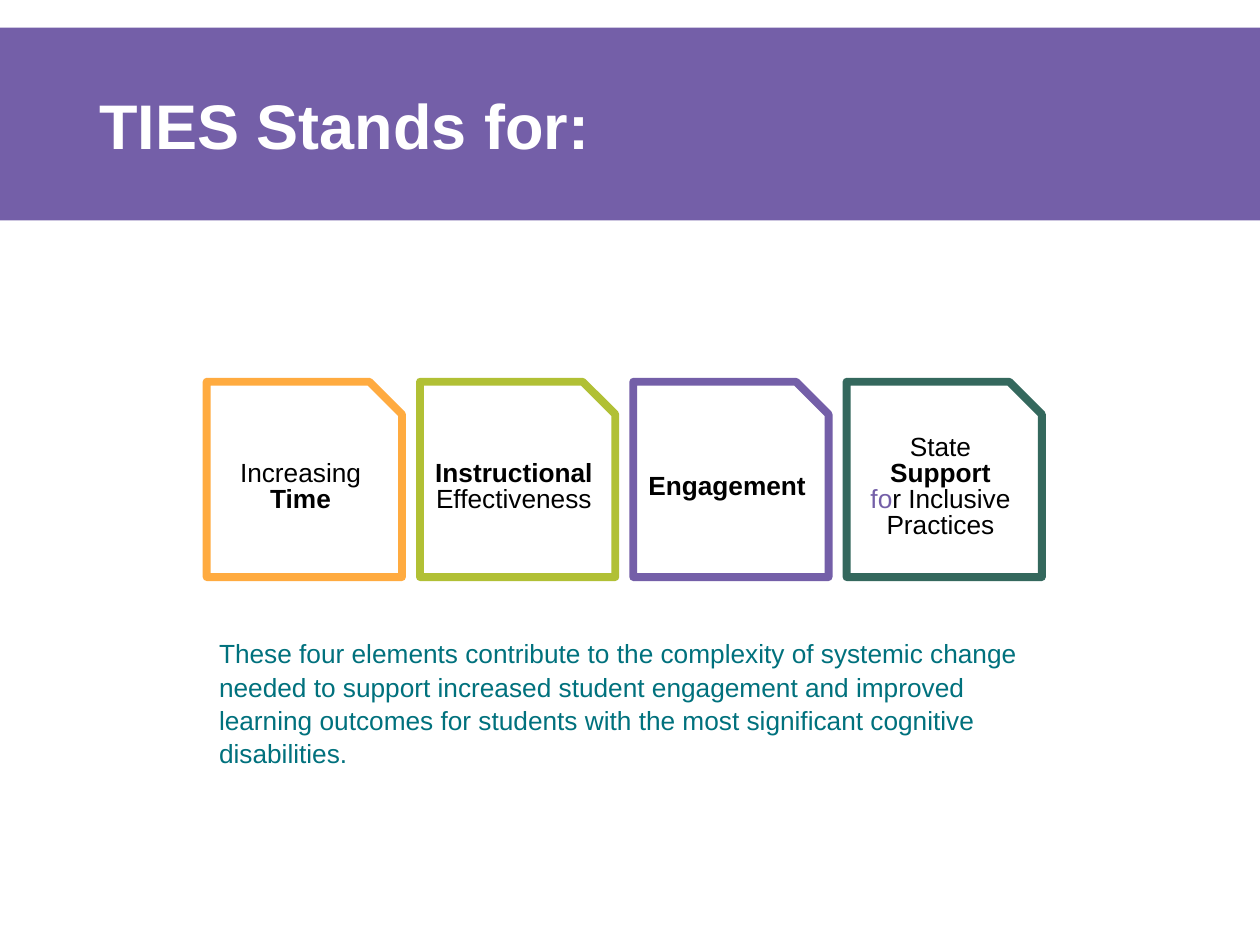
from pptx import Presentation
from pptx.dml.color import RGBColor
from pptx.enum.shapes import MSO_SHAPE
from pptx.enum.text import MSO_ANCHOR, PP_ALIGN
from pptx.util import Inches, Pt
from lxml.etree import SubElement
from pptx.oxml.ns import qn

PURPLE, BLACK = "745FA8", "000000"


def color(value):
    return RGBColor.from_string(value)


def add_text(paragraph, text, size=15, fill=BLACK, bold=False):
    run = paragraph.add_run()
    run.text = text
    run.font.name = "Arial"
    run.font.size = Pt(size)
    run.font.bold = bold
    run.font.color.rgb = color(fill)


presentation = Presentation()
presentation.slide_width = Inches(10)
presentation.slide_height = Inches(7.5)
slide = presentation.slides.add_slide(presentation.slide_layouts[5])

title = slide.shapes.title
title.left, title.top = Inches(0.69), Inches(0.22)
title.width, title.height = Inches(8.62), Inches(1.53)
frame = title.text_frame
frame.margin_left = frame.margin_right = Inches(0.1)
frame.margin_top = frame.margin_bottom = Inches(0.1)
frame.vertical_anchor = MSO_ANCHOR.MIDDLE
frame.paragraphs[0].alignment = PP_ALIGN.LEFT
add_text(frame.paragraphs[0], "TIES Stands for:", size=36, fill="FFFFFF", bold=True)

band = slide.shapes.add_shape(
    MSO_SHAPE.RECTANGLE, 0, Inches(0.22), presentation.slide_width, Inches(1.53))
band.shadow.inherit = False
band.fill.solid()
band.fill.fore_color.rgb = color(PURPLE)
band.line.fill.background()
title.element.addprevious(band.element)

plain, bold, purple = {}, {"bold": True}, {"fill": PURPLE}
cards = [
    ("FFAB40", [[("Increasing", plain)], [("Time", bold)]]),
    ("B1C035", [[("Instructional", bold)], [("Effectiveness", plain)]]),
    (PURPLE, [[("Engagement", bold)]]),
    ("34685D", [[("State", plain)], [("Support", bold)],
                [("fo", purple), ("r Inclusive", plain)], [("Practices", plain)]]),
]
card_size, card_step = 1.55, 1.693
for index, (outline, lines) in enumerate(cards):
    card = slide.shapes.add_shape(
        MSO_SHAPE.SNIP_1_RECTANGLE, Inches(1.64 + index * card_step), Inches(3.03),
        Inches(card_size), Inches(card_size))
    card.shadow.inherit = False
    card.fill.background()
    card.line.color.rgb = color(outline)
    card.line.width = Pt(4.5)
    SubElement(card.line._ln, qn("a:round"))
    frame = card.text_frame
    frame.word_wrap = False
    frame.vertical_anchor = MSO_ANCHOR.MIDDLE
    frame.margin_left, frame.margin_right = Inches(0.07), 0
    frame.margin_top = frame.margin_bottom = Inches(0.05)
    for number, line in enumerate(lines):
        paragraph = frame.add_paragraph() if number else frame.paragraphs[0]
        paragraph.alignment = PP_ALIGN.CENTER
        paragraph.line_spacing = Pt(15)
        for text, style in line:
            add_text(paragraph, text, **style)

summary = slide.shapes.add_textbox(Inches(1.64), Inches(5), Inches(6.63), Inches(1.11))
summary.text_frame.word_wrap = True
paragraph = summary.text_frame.paragraphs[0]
paragraph.line_spacing = 1.05
add_text(
    paragraph,
    "These four elements contribute to the complexity of systemic change needed to "
    "support increased student engagement and improved learning outcomes for students "
    "with the most significant cognitive disabilities.",
    fill="00717D")

presentation.save("out.pptx")
